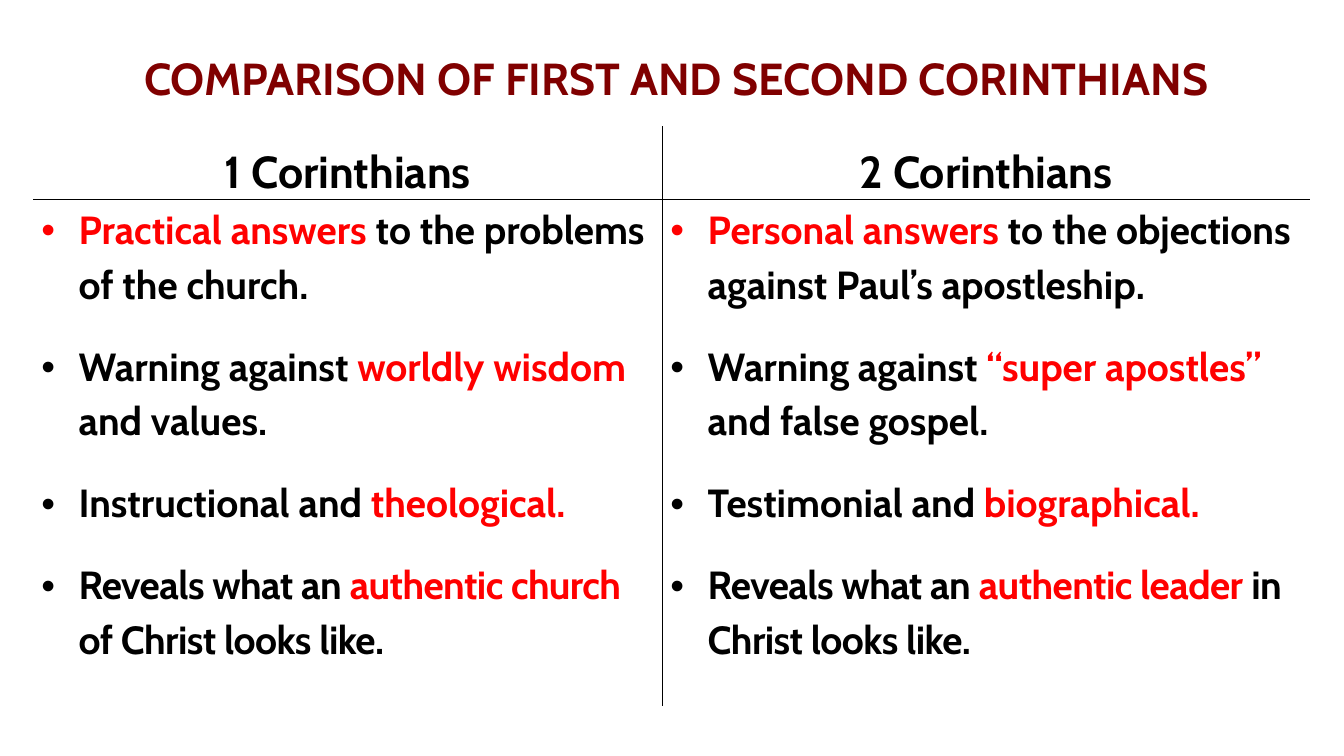
import pptx
import pptx.dml.color
import pptx.enum.text
import pptx.oxml
import pptx.oxml.ns
import pptx.util
from dataclasses import dataclass

Inches, Pt = pptx.util.Inches, pptx.util.Pt
PP_ALIGN, MSO_ANCHOR = pptx.enum.text.PP_ALIGN, pptx.enum.text.MSO_ANCHOR


@dataclass(frozen=True)
class Theme:
    """Colours, font and type sizes of the slide."""
    font: str = "Cabin"
    title: str = "800000"
    text: str = "000000"
    accent: str = "FF0000"
    heading_size: int = 32
    body_size: int = 28
    line_spacing: float = 1.15
    item_gap: float = 19.5


THEME = Theme()
HEADINGS = ["1 Corinthians", "2 Corinthians"]
POINTS = [
    [
        [("Practical answers ", True), ("to the problems of the church.", False)],
        [("Warning against ", False), ("worldly wisdom ", True), ("and values.", False)],
        [("Instructional and ", False), ("theological.", True)],
        [("Reveals what an ", False), ("authentic church ", True), ("of Christ looks like.", False)],
    ],
    [
        [("Personal answers ", True), ("to the objections against Paul’s apostleship.", False)],
        [("Warning against ", False), ("“super apostles” ", True), ("and false gospel.", False)],
        [("Testimonial and ", False), ("biographical.", True)],
        [("Reveals what an ", False), ("authentic leader ", True), ("in Christ looks like.", False)],
    ],
]


def apply(obj, values):
    """Set each attribute named in values on obj."""
    for name, value in values.items():
        setattr(obj, name, value)


def add_run(p, text, size, color):
    """Add a bold run in the theme font and return it."""
    r = p.add_run()
    r.text = text
    apply(r.font, {"name": THEME.font, "size": Pt(size), "bold": True})
    r.font.color.rgb = pptx.dml.color.RGBColor.from_string(color)
    return r


def add_title(s, text, left, top, width, height):
    """Place the title placeholder in its box and fill it."""
    sp = s.shapes.title
    apply(sp, {"left": Inches(left), "top": Inches(top),
               "width": Inches(width), "height": Inches(height)})
    tf = sp.text_frame
    apply(tf, {"word_wrap": True, "vertical_anchor": MSO_ANCHOR.MIDDLE})
    p = tf.paragraphs[0]
    p.alignment = PP_ALIGN.CENTER
    add_run(p, text, THEME.heading_size, THEME.title)


def format_cell(cell, anchor, sides):
    """Set margins, draw borders on the given sides only and clear the fill."""
    apply(cell, {"margin_left": Inches(0.07), "margin_right": Inches(0.07),
                 "margin_top": 0, "margin_bottom": 0, "vertical_anchor": anchor})
    tc_pr = cell._tc.get_or_add_tcPr()
    for side in "LRTB":
        paint = (f'<a:solidFill><a:srgbClr val="{THEME.text}"/></a:solidFill>'
                 if side in sides else "<a:noFill/>")
        tc_pr.append(pptx.oxml.parse_xml(
            f'<a:ln{side} {pptx.oxml.ns.nsdecls("a")} w="{Pt(1)}">{paint}</a:ln{side}>'))
    cell.fill.background()


def add_bullet(p):
    """Give a paragraph a hanging round bullet."""
    p_pr = p._p.get_or_add_pPr()
    p_pr.set("marL", str(Inches(0.38)))
    p_pr.set("indent", str(Inches(-0.37)))
    for tag in ('buFont {} typeface="Arial"', 'buChar {} char="•"'):
        p_pr.append(pptx.oxml.parse_xml(f"<a:{tag.format(pptx.oxml.ns.nsdecls('a'))}/>"))


def fill_points(tf, points):
    """Write bulleted points, with the last one set slightly tighter."""
    for i, parts in enumerate(points):
        p = tf.add_paragraph() if i else tf.paragraphs[0]
        add_bullet(p)
        apply(p, {"line_spacing": THEME.line_spacing,
                  "space_before": Pt(THEME.item_gap if i else 0)})
        for text, accented in parts:
            r = add_run(p, text, THEME.body_size, THEME.accent if accented else THEME.text)
            if i == len(points) - 1:
                r.font._element.set("spc", "-40")


def add_comparison(s, left, top, col_widths, row_heights):
    """Add the two-column table with its cross-shaped rule."""
    table = s.shapes.add_table(2, 2, Inches(left), Inches(top),
                               Inches(sum(col_widths)), Inches(sum(row_heights))).table
    apply(table, {"first_row": False, "horz_banding": False})
    for row, height in zip(table.rows, row_heights):
        row.height = Inches(height)
    for i, width in enumerate(col_widths):
        table.columns[i].width = Inches(width)
        inner = "RL"[i]
        head, body = table.cell(0, i), table.cell(1, i)
        format_cell(head, MSO_ANCHOR.BOTTOM, inner + "B")
        format_cell(body, MSO_ANCHOR.TOP, inner + "T")
        p = head.text_frame.paragraphs[0]
        apply(p, {"alignment": PP_ALIGN.CENTER, "line_spacing": THEME.line_spacing})
        add_run(p, HEADINGS[i], THEME.heading_size, THEME.text)
        fill_points(body.text_frame, POINTS[i])


def main():
    """Build and save the slide."""
    prs = pptx.Presentation()
    apply(prs, {"slide_width": Inches(13.33), "slide_height": Inches(7.5)})
    s = prs.slides.add_slide(prs.slide_layouts.get_by_name("Title Only"))
    add_title(s, "COMPARISON OF FIRST AND SECOND CORINTHIANS", 0.92, 0.46, 11.58, 0.63)
    add_comparison(s, 0.33, 1.25, (6.24, 6.42), (0.73, 5.02))
    prs.save("out.pptx")


if __name__ == "__main__":
    main()
